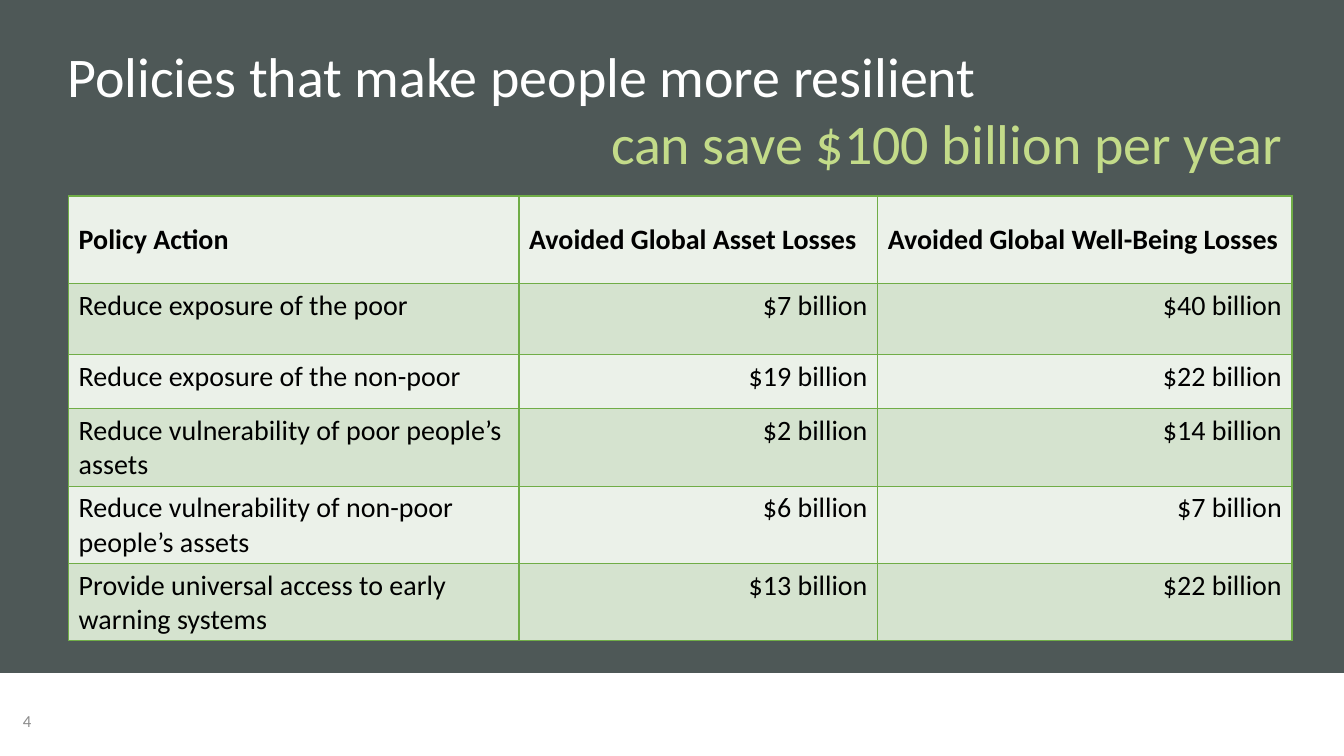
import pptx
import pptx.dml.color
import pptx.enum.shapes
import pptx.enum.text
import pptx.oxml
import pptx.oxml.ns
import pptx.util
from pptx.util import Cm

TITLE = ["Policies that make people more resilient", "can save $100 billion per year"]
SLIDE_NUMBER = "4"
HEADINGS = ("Policy Action", "Avoided Global Asset Losses", "Avoided Global Well-Being Losses")
POLICIES = [
    ("Reduce exposure of the poor", "$7 billion", "$40 billion"),
    ("Reduce exposure of the non-poor", "$19 billion", "$22 billion"),
    ("Reduce vulnerability of poor people’s assets", "$2 billion", "$14 billion"),
    ("Reduce vulnerability of non-poor people’s assets", "$6 billion", "$7 billion"),
    ("Provide universal access to early warning systems", "$13 billion", "$22 billion"),
]
COLUMN_WIDTHS = (11.35, 9.04, 10.44)
ROW_HEIGHTS = (2.21, 1.78, 1.37, 1.91, 1.91, 1.91)

THEME = {
    "font": "Calibri",
    "backdrop": "4E5857", "title": "FFFFFF", "accent": "C3DB89", "number": "8C8C8C",
    "text": "000000", "border": "70AD47", "bands": ("EBF1E9", "D5E3CF"),
    "title_size": 40, "table_size": 20, "number_size": 12,
}
LEFT = pptx.enum.text.PP_ALIGN.LEFT
RIGHT = pptx.enum.text.PP_ALIGN.RIGHT
MIDDLE = pptx.enum.text.MSO_ANCHOR.MIDDLE
TOP = pptx.enum.text.MSO_ANCHOR.TOP


def rgb(name):
    return pptx.dml.color.RGBColor.from_string(name)


def style(paragraph, size, color, align=LEFT, bold=False):
    paragraph.alignment = align
    for run in paragraph.runs:
        run.font.name = THEME["font"]
        run.font.size = pptx.util.Pt(size)
        run.font.bold = bold
        run.font.color.rgb = rgb(color)


def add_text(slide, lines, left, top, width, height):
    frame = slide.shapes.add_textbox(Cm(left), Cm(top), Cm(width), Cm(height)).text_frame
    frame.word_wrap = True
    frame.text = "\n".join(lines)
    return frame


def add_borders(cell):
    """Put the four border lines ahead of the fill, as the schema requires."""
    properties = cell._tc.get_or_add_tcPr()
    for position, side in enumerate(("lnL", "lnR", "lnT", "lnB")):
        properties.insert(position, pptx.oxml.parse_xml(
            f'<a:{side} {pptx.oxml.ns.nsdecls("a")} w="{pptx.util.Pt(1)}"><a:solidFill>'
            f'<a:srgbClr val="{THEME["border"]}"/></a:solidFill></a:{side}>'))


def add_backdrop(slide, width):
    backdrop = slide.shapes.add_shape(
        pptx.enum.shapes.MSO_SHAPE.RECTANGLE, 0, 0, width, Cm(16.94))
    backdrop.shadow.inherit = False
    backdrop.fill.solid()
    backdrop.fill.fore_color.rgb = rgb(THEME["backdrop"])
    backdrop.line.color.rgb = rgb(THEME["backdrop"])
    backdrop.line.width = pptx.util.Pt(1)


def add_policy_table(slide):
    rows = [HEADINGS] + POLICIES
    table = slide.shapes.add_table(
        len(rows), len(HEADINGS), Cm(1.73), Cm(4.94),
        Cm(sum(COLUMN_WIDTHS)), Cm(sum(ROW_HEIGHTS))).table
    for column, width in zip(table.columns, COLUMN_WIDTHS):
        column.width = Cm(width)
    for row, height in zip(table.rows, ROW_HEIGHTS):
        row.height = Cm(height)
    for r, values in enumerate(rows):
        heading = r == 0
        for c, value in enumerate(values):
            cell = table.cell(r, c)
            cell.text_frame.text = value
            cell.vertical_anchor = MIDDLE if heading else TOP
            cell.fill.solid()
            cell.fill.fore_color.rgb = rgb(THEME["bands"][r % 2])
            add_borders(cell)
            style(cell.text_frame.paragraphs[0], THEME["table_size"], THEME["text"],
                  LEFT if heading or c == 0 else RIGHT, heading)


def main():
    deck = pptx.Presentation()
    deck.slide_width, deck.slide_height = Cm(33.87), Cm(19.05)
    slide = deck.slides.add_slide(deck.slide_layouts[6])
    add_backdrop(slide, deck.slide_width)

    number = add_text(slide, [SLIDE_NUMBER], 0, 17.65, 1.04, 1.02)
    number.vertical_anchor = MIDDLE
    style(number.paragraphs[0], THEME["number_size"], THEME["number"], RIGHT)

    claim, saving = add_text(slide, TITLE, 1.45, 0.91, 31.12, 3.68).paragraphs
    style(claim, THEME["title_size"], THEME["title"])
    style(saving, THEME["title_size"], THEME["accent"], RIGHT)

    add_policy_table(slide)
    deck.save("out.pptx")


if __name__ == "__main__":
    main()
